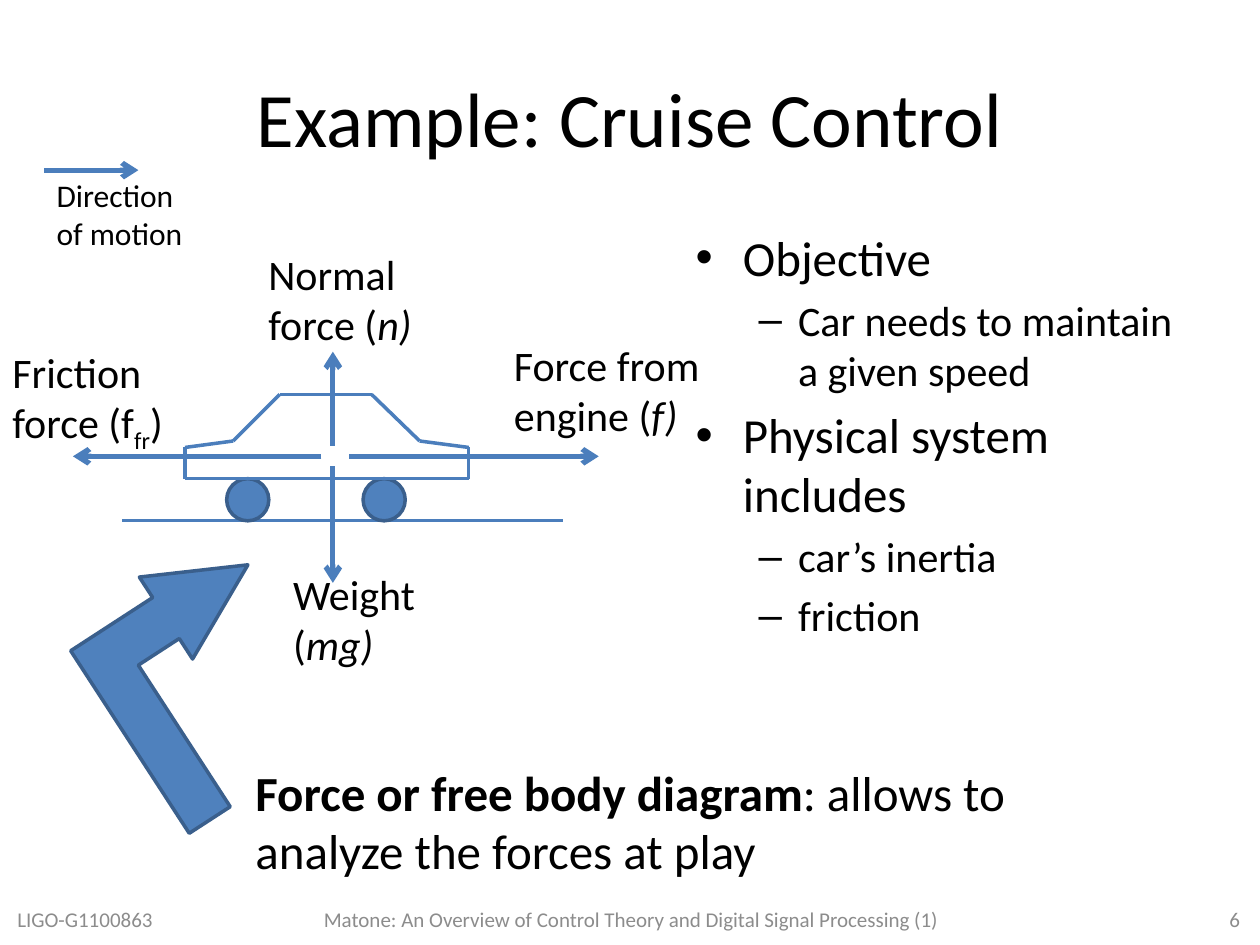
import dataclasses
import itertools

import lxml.etree
import pptx
import pptx.dml.color
import pptx.enum.shapes
import pptx.enum.text
import pptx.oxml.ns
import pptx.util

Cm, Pt = pptx.util.Cm, pptx.util.Pt
Shape = pptx.enum.shapes.MSO_SHAPE
Line = pptx.enum.shapes.MSO_CONNECTOR
Align = pptx.enum.text.PP_ALIGN
Anchor = pptx.enum.text.MSO_ANCHOR
Fit = pptx.enum.text.MSO_AUTO_SIZE


@dataclasses.dataclass(frozen=True)
class Theme:
    font: str = "Calibri"
    ink: str = "000000"
    pale: str = "8C8C8C"
    blue: str = "4F81BD"
    stroke: str = "4B7EBC"
    edge: str = "3A5F8C"
    title: int = 44
    large: int = 28
    label: int = 24
    small: int = 18
    foot: int = 12
    thin: int = 2
    thick: int = 3


def shade(code):
    return pptx.dml.color.RGBColor.from_string(code)


def add_tag(parent, name, **values):
    return lxml.etree.SubElement(parent, pptx.oxml.ns.qn(name), **values)


def add_run(par, text, font, size, color, bold=False, slant=False, base=0):
    """Add a run; base is the script offset in percent."""
    run = par.add_run()
    run.text = text
    run.font.name, run.font.size = font, Pt(size)
    run.font.bold, run.font.italic = bold, slant
    run.font.color.rgb = shade(color)
    if base:
        run.font._element.set("baseline", str(base * 1000))


class Deck:
    def __init__(self, theme):
        self.theme = theme
        self.file = pptx.Presentation()
        self.file.slide_width, self.file.slide_height = Cm(25.4), Cm(19.05)
        self.slide = self.file.slides.add_slide(self.file.slide_layouts[1])
        self.shapes = self.slide.shapes

    def run(self, par, text, size, color=None, **style):
        add_run(par, text, self.theme.font, size, color or self.theme.ink,
                **style)

    def place(self, shape, box):
        shape.left, shape.top, shape.width, shape.height = map(Cm, box)

    def title(self, text, box):
        shape = self.shapes.title
        self.place(shape, box)
        self.run(shape.text_frame.paragraphs[0], text, self.theme.title)

    def list(self, items, box):
        """Fill the body with (level, text) items."""
        shape = self.slide.placeholders[1]
        self.place(shape, box)
        frame = shape.text_frame
        sizes = self.theme.large, self.theme.label
        for spot, (level, text) in enumerate(items):
            par = frame.add_paragraph() if spot else frame.paragraphs[0]
            par.level = level
            if not spot:
                par.space_before = Pt(0)
            self.run(par, text, sizes[level])

    def text(self, runs, box, size, color=None, align=Align.LEFT,
             anchor=Anchor.TOP, fit=Fit.SHAPE_TO_FIT_TEXT, home=None):
        """Add a text box of (text, style) runs."""
        frame = (home or self.shapes).add_textbox(*map(Cm, box)).text_frame
        frame.word_wrap, frame.auto_size = True, fit
        frame.vertical_anchor = anchor
        par = frame.paragraphs[0]
        par.alignment = align
        for text, style in runs:
            self.run(par, text, size, color, **style)

    def line(self, start, end, arrow=False, home=None):
        line = (home or self.shapes).add_connector(
            Line.STRAIGHT, *map(Cm, (*start, *end)))
        line.line.color.rgb = shade(self.theme.stroke)
        line.line.width = Pt(self.theme.thick if arrow else self.theme.thin)
        if arrow:
            add_tag(line.line._get_or_add_ln(), "a:tailEnd", type="arrow")
        add_tag(line._element.spPr, "a:effectLst")

    def shape(self, kind, box, home=None):
        shape = (home or self.shapes).add_shape(kind, *map(Cm, box))
        shape.shadow.inherit = False
        shape.fill.solid()
        shape.fill.fore_color.rgb = shade(self.theme.blue)
        shape.line.color.rgb = shade(self.theme.edge)
        shape.line.width = Pt(self.theme.thin)
        return shape

    def group(self):
        return self.shapes.add_group_shape().shapes


def draw_car(deck):
    deck.line((2.46, 10.49), (11.35, 10.49))
    for left in (4.57, 7.32):
        deck.shape(Shape.OVAL, (left, 9.65, 0.85, 0.85))
    body = [(3.73, 9.65), (3.73, 9.02), (4.7, 8.89), (5.64, 7.95),
            (7.49, 7.95), (8.46, 8.89), (9.45, 9.02), (9.45, 9.65)]
    home = deck.group()
    for start, end in itertools.pairwise(body + body[:1]):
        deck.line(start, end, home=home)


def draw_forces(deck):
    small, label = deck.theme.small, deck.theme.label
    slant = {"slant": True}
    deck.line((0.89, 3.43), (2.79, 3.43), arrow=True)
    deck.text([("Direction of motion", {})], (0.89, 3.43, 3.18, 1.8), small)
    mid, axle = 6.71, 9.2
    for start, end in (((7.04, axle), (12.07, axle)),
                       ((6.48, axle), (1.47, axle)),
                       ((mid, 9.4), (mid, 11.75)),
                       ((mid, 8.99), (mid, 7.09))):
        deck.line(start, end, arrow=True)
    for runs, left, top, width in (
            ([("Normal force (", {}), ("n)", slant)], 5.16, 4.88, 3.66),
            ([("Force from engine (", {}), ("f)", slant)], 10.11, 6.71, 4.7),
            ([("Weight (", {}), ("mg)", slant)], 5.66, 11.33, 3.43),
            ([("Friction force (f", {}), ("fr", {"base": -25}), (")", {})],
             0, 6.86, 4.14)):
        deck.text(runs, (left, top, width, 2.31), label)


def draw_note(deck):
    home = deck.group()
    deck.text([("Force or free body diagram", {"bold": True}),
               (": allows to analyze the forces at play", {})],
              (4.9, 15.24, 16.59, 2.64), deck.theme.large, home=home)
    arrow = deck.shape(Shape.BENT_UP_ARROW, (1.7, 11.71, 4.88, 3.94), home)
    arrow.rotation = 57
    arrow._element.spPr.xfrm.set("flipH", "1")
    for spot, share in enumerate((0.25, 0.25, 0.5)):
        arrow.adjustments[spot] = share


def draw_foot(deck):
    for text, left, width, align in (
            ("6", 19.33, 5.92, Align.RIGHT),
            ("Matone: An Overview of Control Theory and Digital Signal"
             " Processing (1)", 3.76, 17.93, Align.CENTER),
            ("LIGO-G1100863", 0.1, 5.92, Align.LEFT)):
        deck.text([(text, {})], (left, 18.01, width, 1.02), deck.theme.foot,
                  deck.theme.pale, align, Anchor.MIDDLE, Fit.NONE)


def main():
    deck = Deck(Theme())
    deck.title("Example: Cruise Control", (1.27, 0.76, 22.86, 3.18))
    deck.list([(0, "Objective"),
               (1, "Car needs to maintain a given speed"),
               (0, "Physical system includes"),
               (1, "car’s inertia"),
               (1, "friction")], (13.77, 4.45, 10.36, 12.57))
    draw_car(deck)
    draw_forces(deck)
    draw_note(deck)
    draw_foot(deck)
    deck.file.save("out.pptx")


if __name__ == "__main__":
    main()
